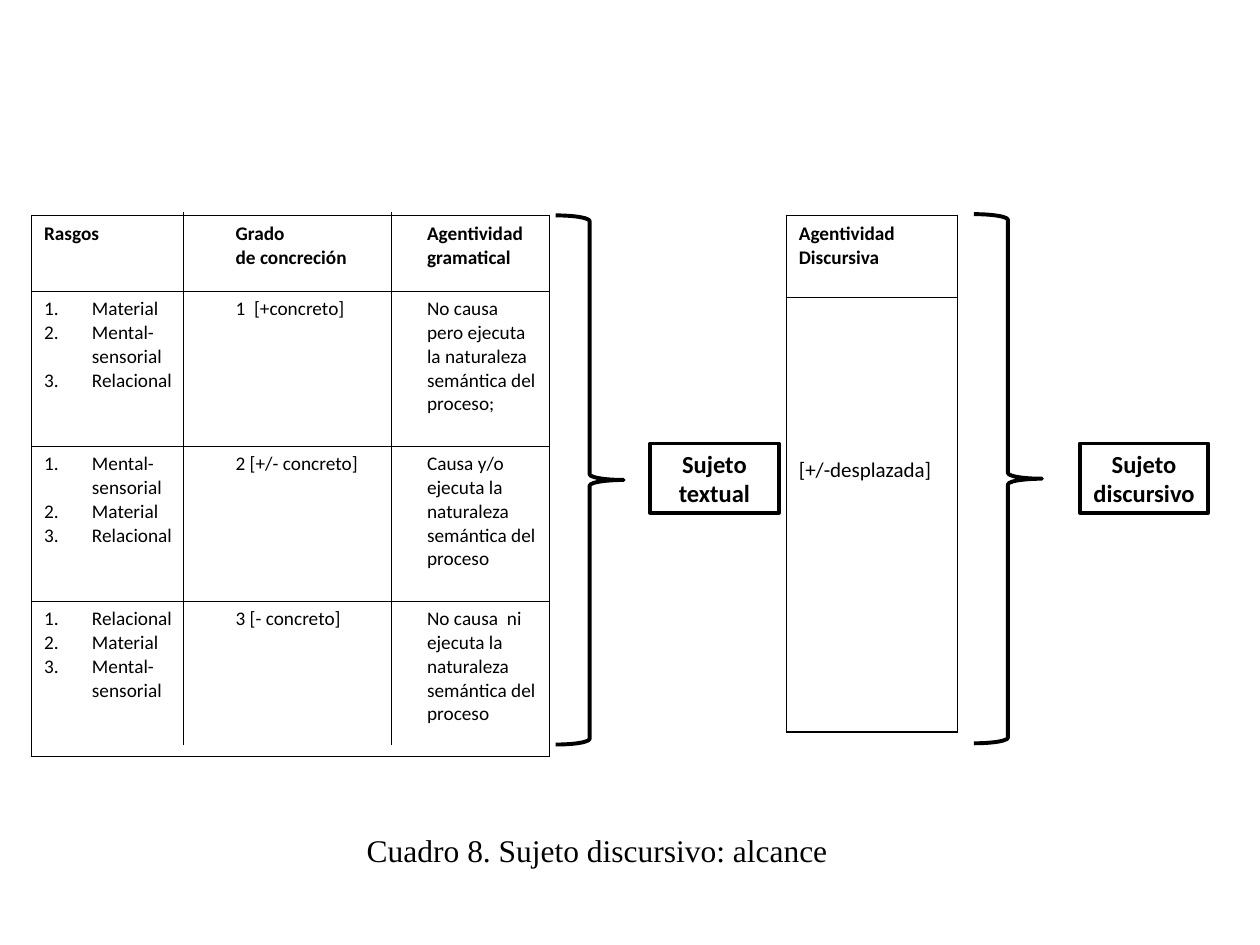
from lxml import etree
from pptx import Presentation
from pptx.dml.color import RGBColor
from pptx.enum.shapes import MSO_CONNECTOR, MSO_SHAPE
from pptx.enum.text import MSO_ANCHOR, PP_ALIGN
from pptx.oxml import parse_xml
from pptx.oxml.ns import nsdecls, qn
from pptx.util import Inches, Pt

BLACK = RGBColor(0, 0, 0)
WHITE = RGBColor(255, 255, 255)
STRAIGHT = MSO_CONNECTOR.STRAIGHT
BRACE, BOX = MSO_SHAPE.RIGHT_BRACE, MSO_SHAPE.RECTANGLE
CENTER, MIDDLE = PP_ALIGN.CENTER, MSO_ANCHOR.MIDDLE


def write(text_frame, text, size, bold=False, font_name="Calibri", align=None):
    text_frame.text = text
    for paragraph in text_frame.paragraphs:
        paragraph.alignment = align
        paragraph.font.name = font_name
        paragraph.font.size = Pt(size)
        paragraph.font.bold = bold
        paragraph.font.color.rgb = BLACK


def style_cell(cell, sides, width):
    """Give the cell a white fill and black borders on the named sides."""
    cell.fill.solid()
    cell.fill.fore_color.rgb = WHITE
    for position, side in enumerate("LRTB"):
        paint = (f'<a:solidFill><a:srgbClr val="{BLACK}"/></a:solidFill>'
                 if side in sides else "<a:noFill/>")
        border = parse_xml(f'<a:ln{side} {nsdecls("a")} w="{Pt(width)}">{paint}</a:ln{side}>')
        cell._tc.get_or_add_tcPr().insert(position, border)


prs = Presentation()
prs.slide_width, prs.slide_height = Inches(10), Inches(7.5)
slide = prs.slides.add_slide(prs.slide_layouts[6])
shapes = slide.shapes

# Table of features, concreteness and grammatical agency
feature_rows = [
    ("Rasgos", "Grado\nde concreción", "Agentividad\ngramatical"),
    ("Material\nMental-sensorial\nRelacional", "1  [+concreto]",
     "No causa pero ejecuta la naturaleza semántica del proceso;"),
    ("Mental-sensorial\nMaterial\nRelacional", "2 [+/- concreto]",
     "Causa y/o\nejecuta la\nnaturaleza\nsemántica del\nproceso"),
    ("Relacional\nMaterial\nMental-sensorial", "3 [- concreto]",
     "No causa  ni ejecuta la naturaleza semántica del proceso"),
]
features = shapes.add_table(4, 3, Inches(0.25), Inches(1.71), Inches(4.11), Inches(4.29)).table
for column, width in zip(features.columns, (1.52, 1.52, 1.07)):
    column.width = Inches(width)
for row, height in zip(features.rows, (0.6, 1.23, 1.23, 1.23)):
    row.height = Inches(height)
for r, texts in enumerate(feature_rows):
    for c, text in enumerate(texts):
        cell = features.cell(r, c)
        write(cell.text_frame, text, 11, bold=r == 0)
        style_cell(cell, ("LTB", "TB", "RTB")[c], 0.5)
    if r > 0:
        # Numbered list with a hanging indent
        for paragraph in features.cell(r, 0).text_frame.paragraphs:
            properties = paragraph._p.get_or_add_pPr()
            properties.set("marL", str(Inches(0.38)))
            properties.set("indent", str(-Inches(0.38)))
            numbering = etree.SubElement(properties, qn("a:buAutoNum"))
            numbering.set("type", "arabicPeriod")
            # Bullets come before the default run properties
            properties.insert(0, numbering)

# Column dividers
for x in (1.46, 3.11):
    divider = shapes.add_connector(STRAIGHT, Inches(x), Inches(1.68), Inches(x), Inches(5.91))
    divider.line.color.rgb = BLACK
    divider.line.width = Pt(0.5)
    etree.SubElement(divider._element.spPr, qn("a:effectLst"))

# Table of discursive agency
agency = shapes.add_table(2, 1, Inches(6.24), Inches(1.71), Inches(1.36), Inches(4.1)).table
agency.rows[0].height, agency.rows[1].height = Inches(0.65), Inches(3.45)
write(agency.cell(0, 0).text_frame, "Agentividad\nDiscursiva", 11, bold=True)
write(agency.cell(1, 0).text_frame, "[+/-desplazada]", 12)
agency.cell(1, 0).margin_top = Inches(1.27)
for r in range(2):
    style_cell(agency.cell(r, 0), "LRTB", 1)

# Braces, each leading to a kind of subject
for brace_x, brace_y, subject_x, subject in (
    (4.41, 1.71, 5.16, "Sujeto\ntextual"),
    (7.73, 1.7, 8.57, "Sujeto\ndiscursivo"),
):
    brace = shapes.add_shape(BRACE, Inches(brace_x), Inches(brace_y), Inches(0.54), Inches(4.2))
    brace.fill.background()
    subject_box = shapes.add_shape(BOX, Inches(subject_x), Inches(3.52), Inches(1.02), Inches(0.55))
    subject_box.fill.solid()
    subject_box.fill.fore_color.rgb = WHITE
    for outlined in (brace, subject_box):
        outlined.shadow.inherit = False
        outlined.line.color.rgb = BLACK
        outlined.line.width = Pt(2.25)
    frame = subject_box.text_frame
    frame.vertical_anchor = MIDDLE
    frame.margin_left = frame.margin_right = Inches(0.05)
    write(frame, subject, 14, bold=True, align=CENTER)

# Caption
caption = shapes.add_textbox(Inches(2.79), Inches(6.55), Inches(3.9), Inches(0.4))
caption.text_frame.word_wrap = False
write(caption.text_frame, "Cuadro 8. Sujeto discursivo: alcance", 18,
      font_name="Times New Roman", align=CENTER)

prs.save("out.pptx")
